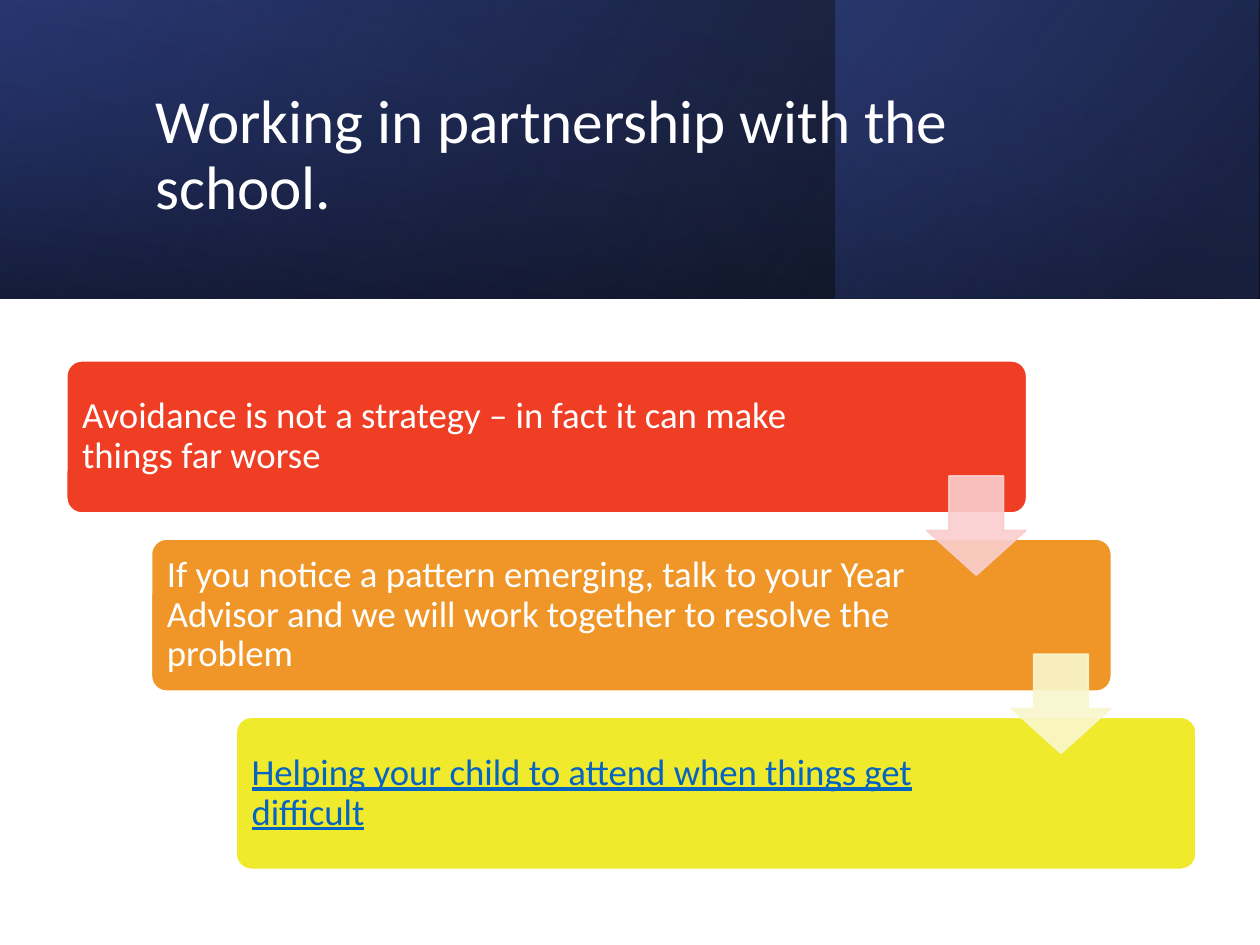
from lxml.etree import SubElement
from pptx import Presentation
from pptx.dml.color import RGBColor
from pptx.enum.shapes import MSO_SHAPE as Preset
from pptx.enum.text import MSO_ANCHOR as Anchor
from pptx.oxml import parse_xml
from pptx.oxml.ns import nsdecls, qn
from pptx.util import Pt

TITLE = "Working in partnership with the school."
STEPS = [
    ("Avoidance is not a strategy – in fact it can make things far worse",
     "EF3E24", "FFFFFF", False, 96),
    ("If you notice a pattern emerging, talk to your Year Advisor and we will "
     "work together to resolve the problem",
     "F09628", "FFFFFF", False, 111),
    ("Helping your child to attend when things get difficult",
     "F0EA2D", "0563C1", True, 111),
]
ARROW_COLORS = ["F9CECD", "F9F7CD"]
BANNER_LAYERS = [
    ((0, 0, 720, 170.6), 0, 330, [(0, "000000", 96), (100, "2B3B79", 100)]),
    ((477.4, 0, 242, 170.6), 0, 320, [(19, "1D2750", 68), (100, "3A4FA1", 48)]),
    ((274.7, -274.7, 170.6, 720), 270, 350, [(23, "2B3B79", 16), (99, "000000", 45)]),
]
FONT = "Calibri"
STEP_X, STEP_Y = 48.4, 101.8
BOX_LEFT, BOX_TOP, BOX_WIDTH, BOX_HEIGHT = 38.1, 206.2, 548.6, 87
ARROW_LEFT, ARROW_TOP, ARROW_SIZE = 529.6, 272, 56.6


def rgb(value):
    return RGBColor.from_string(value)


def add_preset(slide, preset, box, color=None):
    shape = slide.shapes.add_shape(preset, *map(Pt, box))
    shape.shadow.inherit = False
    if color:
        shape.fill.solid()
        shape.fill.fore_color.rgb = rgb(color)
    return shape


def add_banner_layer(slide, box, rotation, angle, stops):
    layer = add_preset(slide, Preset.RECTANGLE, box)
    layer.rotation = rotation
    layer.line.fill.background()
    properties = layer._element.spPr
    properties.find(qn("a:xfrm")).set("flipH", "1")
    stop_xml = "".join(
        f'<a:gs pos="{position * 1000}"><a:srgbClr val="{color}">'
        f'<a:alpha val="{alpha * 1000}"/></a:srgbClr></a:gs>'
        for position, color, alpha in stops)
    gradient = parse_xml(
        f'<a:gradFill rotWithShape="1" {nsdecls("a")}><a:gsLst>{stop_xml}</a:gsLst>'
        f'<a:lin ang="{angle * 60000}" scaled="0"/></a:gradFill>')
    properties.find(qn("a:prstGeom")).addnext(gradient)


def write(frame, text, size, color, underline=None):
    frame.word_wrap = True
    frame.vertical_anchor = Anchor.MIDDLE
    frame.text = text
    paragraph = frame.paragraphs[0]
    paragraph.alignment = 1
    paragraph.line_spacing = 0.9
    font = paragraph.runs[0].font
    font.name, font.size, font.underline = FONT, Pt(size), underline
    font.color.rgb = rgb(color)


def add_step(slide, index, text, fill, text_color, underline, right_inset):
    step = add_preset(slide, Preset.ROUNDED_RECTANGLE,
                      (BOX_LEFT + index * STEP_X, BOX_TOP + index * STEP_Y,
                       BOX_WIDTH, BOX_HEIGHT), fill)
    step.adjustments[0] = 0.1
    step.line.color.rgb = rgb("FFFFFF")
    step.line.width = Pt(1)
    frame = step.text_frame
    frame.margin_left = frame.margin_top = frame.margin_bottom = Pt(6.3)
    frame.margin_right = Pt(right_inset)
    write(frame, text, 21, text_color, underline)


def add_arrow(slide, index, color):
    arrow = add_preset(slide, Preset.DOWN_ARROW,
                       (ARROW_LEFT + index * STEP_X, ARROW_TOP + index * STEP_Y,
                        ARROW_SIZE, ARROW_SIZE), color)
    arrow.adjustments[0], arrow.adjustments[1] = 0.55, 0.45
    arrow.line.color.rgb = rgb(color)
    arrow.line.width = Pt(1)
    for shade in arrow._element.spPr.iter(qn("a:srgbClr")):
        SubElement(shade, qn("a:alpha")).set("val", "90000")


def main():
    deck = Presentation()
    deck.slide_width, deck.slide_height = Pt(720), Pt(540)
    slide = deck.slides.add_slide(deck.slide_layouts[6])
    for layer in BANNER_LAYERS:
        add_banner_layer(slide, *layer)
    title = slide.shapes.add_textbox(Pt(81.6), Pt(27.4), Pt(570), Pt(123.8))
    write(title.text_frame, TITLE, 35, "FFFFFF")
    for index, step in enumerate(STEPS):
        add_step(slide, index, *step)
    for index, color in enumerate(ARROW_COLORS):
        add_arrow(slide, index, color)
    deck.save("out.pptx")


if __name__ == "__main__":
    main()
